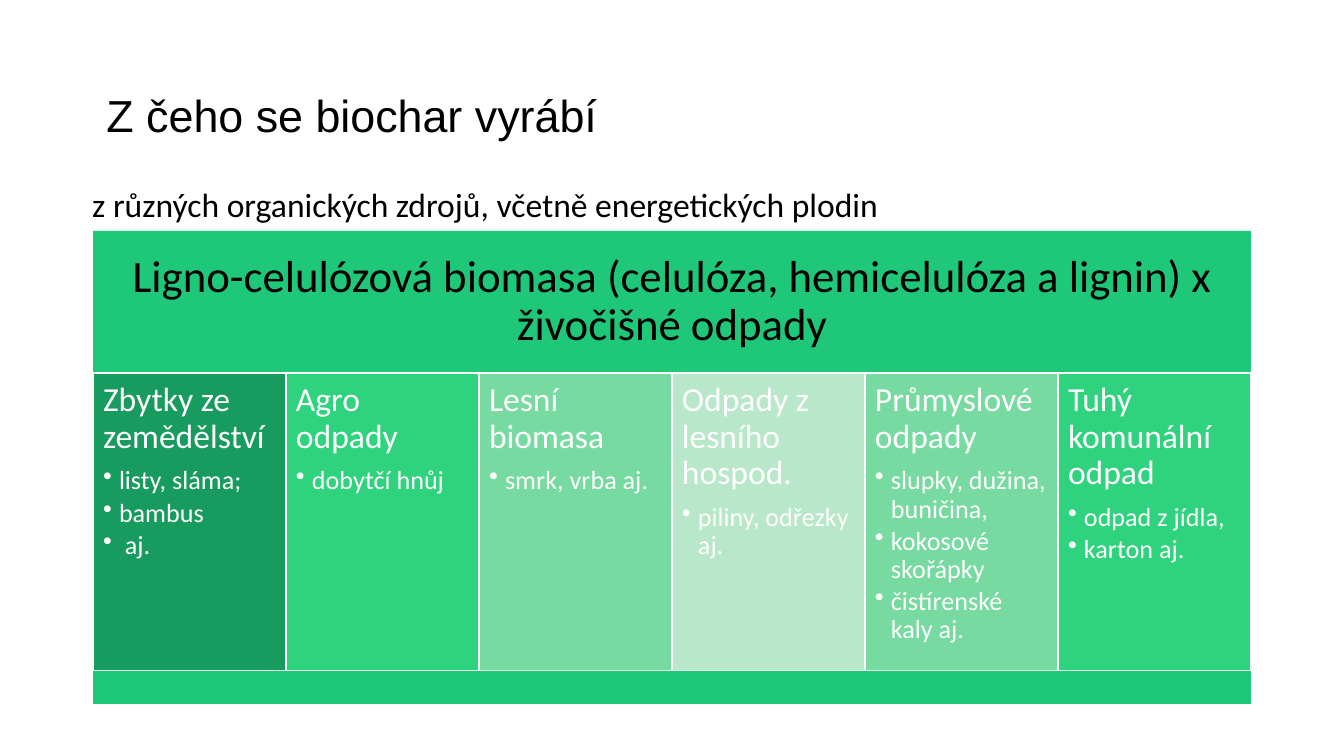
from lxml.etree import SubElement
from pptx import Presentation
from pptx.dml.color import RGBColor
from pptx.enum.shapes import MSO_SHAPE as Shape
from pptx.enum.text import MSO_ANCHOR as Anchor, PP_ALIGN as Align
from pptx.oxml.ns import qn
from pptx.util import Emu, Pt

PAGE_WIDTH, PAGE_HEIGHT = 1344, 756
EMU_PER_PX = 914400 / 134.4


def px(length):
    return Emu(round(length * EMU_PER_PX))


def color(hex_code):
    return RGBColor.from_string(hex_code)


class SlideBuilder:
    heading_font, body_font = "Arial", "Calibri"
    black, white, band_green = "000000", "FFFFFF", "1FC879"
    bullet_indent = 16

    def __init__(self, page):
        self.page = page

    def place(self, box, left, top, width, height):
        box.left, box.top = px(left), px(top)
        box.width, box.height = px(width), px(height)

    def set_insets(self, frame, inset):
        frame.margin_left = frame.margin_right = px(inset)
        frame.margin_top = frame.margin_bottom = px(inset)

    def fill_para(self, para, text, size, ink, font=body_font, align=Align.LEFT,
                  spacing=0.9, after=0, bullet=False):
        para.text = text
        para.alignment = align
        para.line_spacing = spacing
        para.space_before, para.space_after = Pt(0), Pt(after)
        if bullet:
            para.level = 1
            props = para._p.get_or_add_pPr()
            props.set("marL", str(px(self.bullet_indent)))
            props.set("indent", str(-px(self.bullet_indent)))
            SubElement(props, qn("a:buChar"), char="•")
        para.font.name, para.font.size = font, Pt(size)
        para.font.color.rgb = color(ink)

    def title(self, text, *area):
        box = self.page.shapes.title
        self.place(box, *area)
        box.text_frame.vertical_anchor = Anchor.MIDDLE
        self.fill_para(box.text_frame.paragraphs[0], text, 24, self.black,
                       font=self.heading_font)

    def label(self, text, *area):
        box = self.page.shapes.add_textbox(*map(px, area))
        box.text_frame.word_wrap = True
        self.fill_para(box.text_frame.paragraphs[0], text, 18, self.black,
                       spacing=1)

    def rectangle(self, fill, *area, outline=None):
        box = self.page.shapes.add_shape(Shape.RECTANGLE, *map(px, area))
        box.shadow.inherit = False
        box.fill.solid()
        box.fill.fore_color.rgb = color(fill)
        if outline:
            box.line.color.rgb = color(outline)
            box.line.width = Pt(1)
        else:
            box.line.fill.background()
        return box

    def banner(self, text, *area):
        frame = self.rectangle(self.band_green, *area).text_frame
        frame.word_wrap = True
        frame.vertical_anchor = Anchor.MIDDLE
        self.set_insets(frame, 13)
        self.fill_para(frame.paragraphs[0], text, 24, self.black,
                       align=Align.CENTER, after=6)

    def column(self, heading, items, fill, *area):
        frame = self.rectangle(fill, *area, outline=self.white).text_frame
        frame.word_wrap = True
        frame.vertical_anchor = Anchor.TOP
        self.set_insets(frame, 10)
        self.fill_para(frame.paragraphs[0], heading, 18, self.white, after=6.3)
        for item in items:
            self.fill_para(frame.add_paragraph(), item, 14, self.white,
                           after=2.1, bullet=True)


SOURCES = [
    ("Zbytky ze zemědělství", ["listy, sláma;", "bambus", " aj."], "189B5E"),
    ("Agro odpady", ["dobytčí hnůj"], "2FD37D"),
    ("Lesní biomasa", ["smrk, vrba aj."], "77DAA0"),
    ("Odpady z lesního hospod.", ["piliny, odřezky aj."], "B9E7C9"),
    ("Průmyslové odpady",
     ["slupky, dužina, buničina,", "kokosové skořápky", "čistírenské kaly aj."],
     "77DAA0"),
    ("Tuhý komunální odpad", ["odpad z jídla,", "karton aj."], "2FD37D"),
]
LEFT, COLUMN_WIDTH = 93, 193
TABLE_WIDTH = COLUMN_WIDTH * len(SOURCES)
BANNER_TOP, COLUMNS_TOP, FOOTER_TOP, FOOTER_BOTTOM = 231, 373, 671, 704


def main():
    deck = Presentation()
    deck.slide_width, deck.slide_height = px(PAGE_WIDTH), px(PAGE_HEIGHT)
    builder = SlideBuilder(deck.slides.add_slide(deck.slide_layouts[5]))

    # Title and introduction
    builder.title("Z čeho se biochar vyrábí", LEFT, 79, 950, 77)
    builder.label("z různých organických zdrojů, včetně energetických plodin",
                  79, 177, 895, 54)

    # Banner above the columns
    builder.banner("Ligno-celulózová biomasa (celulóza, hemicelulóza a lignin) x "
                   "živočišné odpady",
                   LEFT, BANNER_TOP, TABLE_WIDTH, COLUMNS_TOP - BANNER_TOP)

    # One column per biomass source
    for index, (heading, items, fill) in enumerate(SOURCES):
        builder.column(heading, items, fill, LEFT + index * COLUMN_WIDTH,
                       COLUMNS_TOP, COLUMN_WIDTH, FOOTER_TOP - COLUMNS_TOP)

    # Closing band
    builder.rectangle(builder.band_green, LEFT, FOOTER_TOP, TABLE_WIDTH,
                      FOOTER_BOTTOM - FOOTER_TOP)
    deck.save("out.pptx")


if __name__ == "__main__":
    main()
